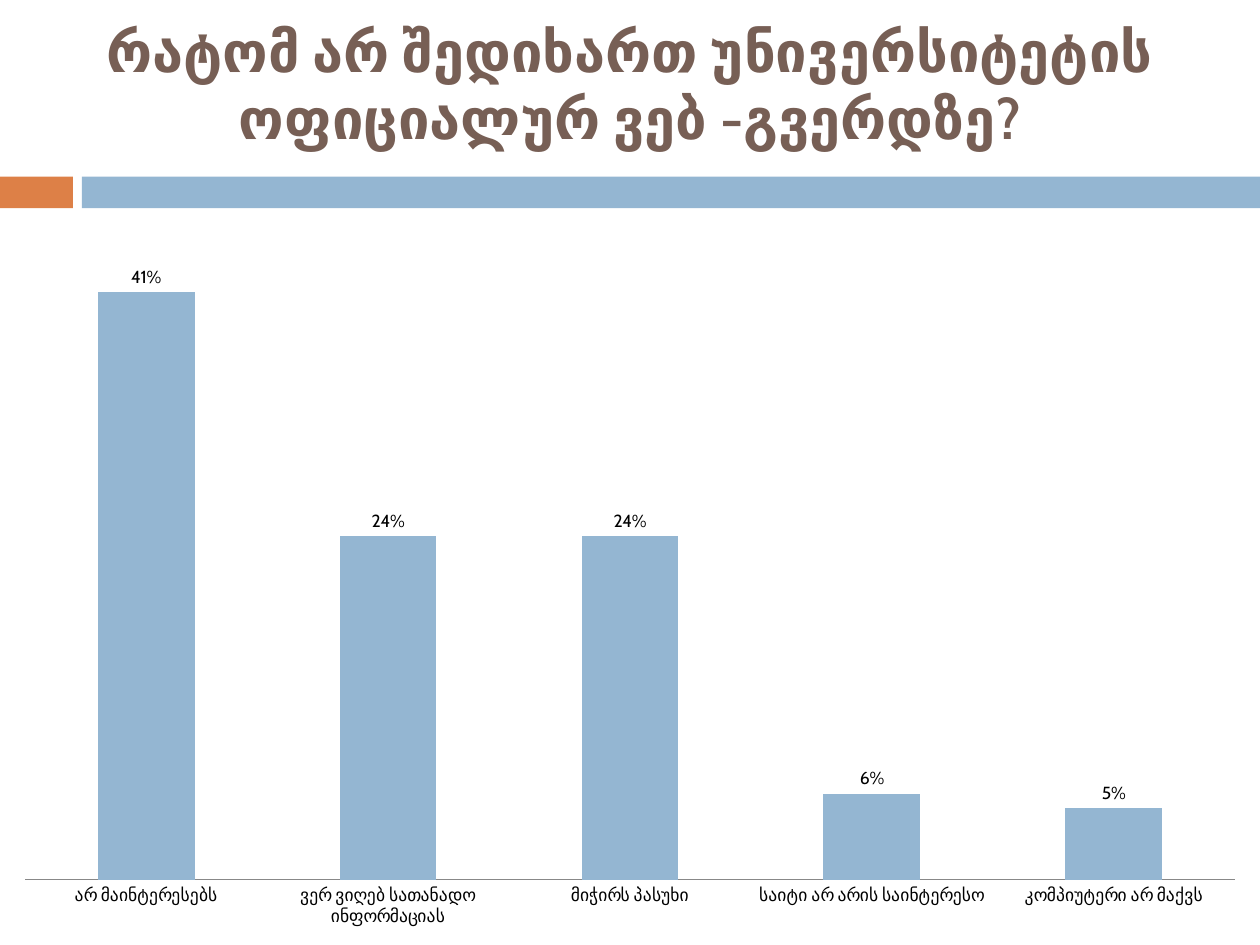
from lxml import etree
from pptx import Presentation
from pptx import util as u
from pptx.chart import data as chart_data
from pptx.dml.color import RGBColor
from pptx.enum import chart as ch, shapes, text
from pptx.oxml import ns

TITLE = "რატომ არ შედიხართ უნივერსიტეტის ოფიციალურ ვებ -გვერდზე?"
ANSWERS = [
    ("არ მაინტერესებს", 0.41),
    ("ვერ ვიღებ სათანადო ინფორმაციას", 0.24),
    ("მიჭირს პასუხი", 0.24),
    ("საიტი არ არის საინტერესო", 0.06),
    ("კომპიუტერი არ მაქვს", 0.05),
]
FONT = "Cabin"
BLUE, ORANGE, BROWN, BLACK, GREY = "94B6D2", "DD8047", "775F55", "000000", "888888"
WIDTH, HEIGHT = 25.4, 19.05
BAND_TOP, BAND_HEIGHT = 3.56, 0.64
BANDS = [(0, 1.47, ORANGE), (1.65, WIDTH - 1.65, BLUE)]
CHART_TOP = 4.45
PLOT_AREA = {"x": 0.02, "y": 0.02, "w": 0.96, "h": 0.89}


def color(value):
    return RGBColor.from_string(value)


def style_font(font, size, value, bold=False):
    font.name, font.size, font.bold = FONT, u.Pt(size), bold
    font.color.rgb = color(value)


def add_band(slide, left, width, fill):
    band = slide.shapes.add_shape(
        shapes.MSO_SHAPE.RECTANGLE,
        u.Cm(left), u.Cm(BAND_TOP), u.Cm(width), u.Cm(BAND_HEIGHT))
    band.shadow.inherit = False
    band.fill.solid()
    band.fill.fore_color.rgb = color(fill)
    band.line.fill.background()


def add_title(slide):
    box = slide.shapes.add_textbox(0, 0, u.Cm(WIDTH), u.Cm(3.38))
    frame = box.text_frame
    frame.word_wrap = True
    frame.vertical_anchor = text.MSO_ANCHOR.MIDDLE
    frame.text = TITLE
    para = frame.paragraphs[0]
    para.alignment = text.PP_ALIGN.CENTER
    style_font(para.runs[0].font, 32, BROWN, bold=True)


def fix_plot_area(chart):
    """Place the inner plot area by fractions of the chart."""
    plot_area = chart.plots[0]._element.getparent()
    for old in plot_area.findall(ns.qn("c:layout")):
        plot_area.remove(old)
    layout = etree.Element(ns.qn("c:layout"))
    manual = etree.SubElement(layout, ns.qn("c:manualLayout"))
    settings = [("layoutTarget", "inner"), ("xMode", "edge"), ("yMode", "edge")]
    for name, value in settings + list(PLOT_AREA.items()):
        etree.SubElement(manual, ns.qn("c:" + name)).set("val", str(value))
    plot_area.insert(0, layout)


def add_answer_chart(slide):
    data = chart_data.CategoryChartData(number_format="0%")
    data.categories = [answer for answer, share in ANSWERS]
    data.add_series("Series 1", [share for answer, share in ANSWERS])
    chart = slide.shapes.add_chart(
        ch.XL_CHART_TYPE.COLUMN_CLUSTERED, 0, u.Cm(CHART_TOP),
        u.Cm(WIDTH), u.Cm(HEIGHT - CHART_TOP), data).chart
    chart.has_legend = chart.has_title = False
    style_font(chart.font, 10, BLACK)

    plot = chart.plots[0]
    plot.gap_width, plot.overlap, plot.vary_by_categories = 150, -25, False
    fill = plot.series[0].format.fill
    fill.solid()
    fill.fore_color.rgb = color(BLUE)
    plot.has_data_labels = True
    labels = plot.data_labels
    labels.show_value = True
    labels.number_format, labels.number_format_is_linked = "0%", False
    labels.position = ch.XL_LABEL_POSITION.OUTSIDE_END
    style_font(labels.font, 10, BLACK)

    categories, values = chart.category_axis, chart.value_axis
    categories.major_tick_mark = ch.XL_TICK_MARK.NONE
    categories.format.line.color.rgb = color(GREY)
    categories.format.line.width = u.Pt(0.75)
    values.visible = values.has_major_gridlines = False
    values.minimum_scale, values.maximum_scale = 0, 0.45
    values.tick_labels.number_format = "0%"
    values.tick_labels.number_format_is_linked = False
    fix_plot_area(chart)


def main():
    deck = Presentation()
    deck.slide_width, deck.slide_height = u.Cm(WIDTH), u.Cm(HEIGHT)
    slide = deck.slides.add_slide(deck.slide_layouts[6])
    for left, width, fill in BANDS:
        add_band(slide, left, width, fill)
    add_title(slide)
    add_answer_chart(slide)
    deck.save("out.pptx")


if __name__ == "__main__":
    main()
